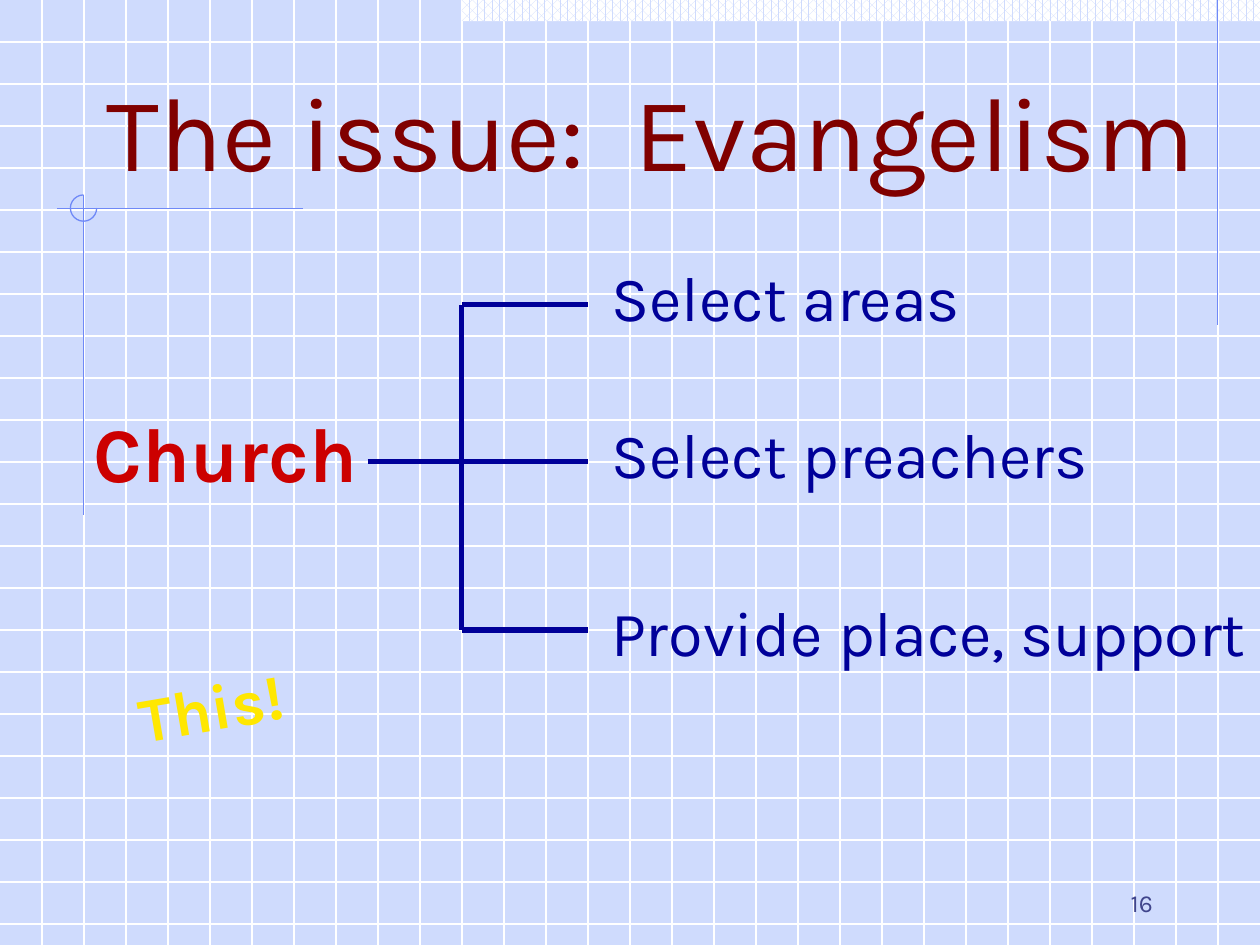
from lxml.etree import SubElement
from pptx import Presentation
from pptx.dml.color import RGBColor
from pptx.enum.dml import MSO_PATTERN
from pptx.enum.shapes import MSO_CONNECTOR, MSO_SHAPE
from pptx.enum.text import MSO_ANCHOR, PP_ALIGN
from pptx.oxml.ns import qn
from pptx.util import Cm, Pt

FONT = "Karla"
COLORS = {
    "background": "CFDBFD", "grid": "FFFFFF", "ornament": "6F89F7",
    "title": "800000", "church": "CC0000", "branch": "000099",
    "this": "FFE701", "number": "40458C",
}
WIDTH, HEIGHT = 25.4, 19.05
STEP = WIDTH / 30

TITLE = "The issue:  Evangelism"
# text, text top, text width, branch height on the slide
BRANCHES = [
    ("Select areas", 5.08, 9.53, 6.14),
    ("Select preachers", 8.26, 11.43, 9.31),
    ("Provide place, support", 11.85, 13.34, 12.7),
]
STEM_X, TRUNK_X, TIP_X, LABEL_X = 7.41, 9.31, 11.85, 12.07
# x1, y1, x2, y2
ORNAMENT_LINES = [
    (24.55, 0, 24.55, 6.55),
    (6.1, 4.21, 1.14, 4.21),
    (1.69, 3.93, 1.69, 10.39),
]


def rgb(name):
    return RGBColor.from_string(COLORS[name])


def add_line(x1, y1, x2, y2, color, width=0.75):
    line = slide.shapes.add_connector(
        MSO_CONNECTOR.STRAIGHT, Cm(x1), Cm(y1), Cm(x2), Cm(y2))
    line.line.color.rgb = rgb(color)
    line.line.width = Pt(width)
    SubElement(line._element.spPr, qn("a:effectLst"))


def add_run(p, text, size, color, bold=False):
    r = p.add_run()
    r.text = text
    r.font.name = FONT
    r.font.size = Pt(size)
    r.font.bold = bold
    r.font.color.rgb = rgb(color)


def add_text(text, x, y, w, h, size, color, bold=False, align=PP_ALIGN.LEFT,
             anchor=MSO_ANCHOR.TOP, wrap=True, half_line_before=False):
    sp = slide.shapes.add_textbox(Cm(x), Cm(y), Cm(w), Cm(h))
    tf = sp.text_frame
    tf.word_wrap = wrap
    tf.vertical_anchor = anchor
    p = tf.paragraphs[0]
    p.alignment = align
    if half_line_before:
        before = SubElement(p._p.get_or_add_pPr(), qn("a:spcBef"))
        SubElement(before, qn("a:spcPct"), val="50000")
    add_run(p, text, size, color, bold)
    return sp


prs = Presentation()
prs.slide_width, prs.slide_height = Cm(WIDTH), Cm(HEIGHT)
slide = prs.slides.add_slide(prs.slide_layouts[5])
slide.background.fill.solid()
slide.background.fill.fore_color.rgb = rgb("background")

# Grid
for i in range(1, 23):
    add_line(0, i * STEP, WIDTH, i * STEP, "grid")
for i in range(1, 30):
    add_line(i * STEP, 0, i * STEP, HEIGHT, "grid")

# Ornaments
band = slide.shapes.add_shape(
    MSO_SHAPE.RECTANGLE, Cm(TRUNK_X), 0, Cm(WIDTH - TRUNK_X), Cm(0.43))
band.shadow.inherit = False
band.line.fill.background()
band.fill.patterned()
band.fill.pattern = MSO_PATTERN.PERCENT_60
band.fill.fore_color.rgb = rgb("background")
band.fill.back_color.rgb = rgb("grid")

for ends in ORNAMENT_LINES:
    add_line(*ends, "ornament")

arc = slide.shapes.add_shape(MSO_SHAPE.ARC, Cm(1.42), Cm(3.93), Cm(0.53), Cm(0.53))
arc.adjustments[0] = 0
arc.adjustments[1] = 162  # 270 degrees: from the right, clockwise to the top
arc.shadow.inherit = False
arc.fill.background()
arc.line.color.rgb = rgb("ornament")
arc.line.width = Pt(0.75)

# Title, brought in front of the grid
title = slide.shapes.title
slide.shapes._spTree.append(title._element)
title.left, title.top, title.width, title.height = Cm(1.9), Cm(1.07), Cm(22.66), Cm(2.97)
title.text_frame.word_wrap = True
title.text_frame.vertical_anchor = MSO_ANCHOR.BOTTOM
p = title.text_frame.paragraphs[0]
p.alignment = PP_ALIGN.LEFT
p.line_spacing = 0.9
add_run(p, TITLE, 60, "title")

# Church and its branches
add_text("Church", 1.48, 8.05, 6.15, 2.11, 44, "church", bold=True,
         align=PP_ALIGN.CENTER, half_line_before=True)
heights = [branch[-1] for branch in BRANCHES]
add_line(TRUNK_X, heights[0], TRUNK_X, heights[-1], "branch", 3)
add_line(STEM_X, heights[1], TRUNK_X, heights[1], "branch", 3)
for text, top, width, y in BRANCHES:
    add_line(TRUNK_X, y, TIP_X, y, "branch", 3)
    add_text(text, LABEL_X, top, width, 1.78, 36, "branch", half_line_before=True)

this = add_text("This!", 1.27, 13.34, 6.15, 2.97, 36, "this", bold=True,
                align=PP_ALIGN.CENTER, wrap=False)
this.rotation = 350.3

add_text("16", 18.21, 17.35, 5.28, 1.27, 14, "number",
         align=PP_ALIGN.RIGHT, anchor=MSO_ANCHOR.BOTTOM)

prs.save("out.pptx")
